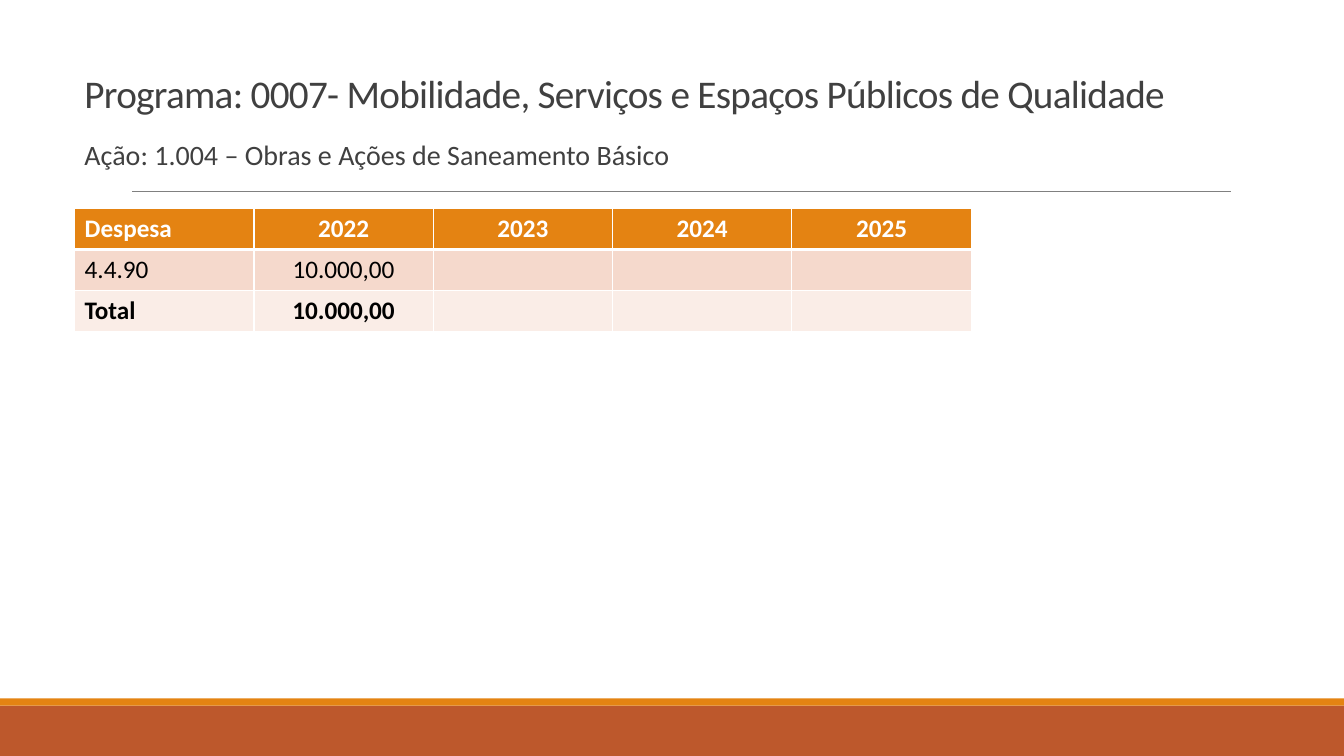
import lxml.etree
import pptx
import pptx.dml.color
import pptx.enum.shapes
import pptx.enum.text
import pptx.oxml.ns
import pptx.util

Cm = pptx.util.Cm
Pt = pptx.util.Pt
ANCHOR = pptx.enum.text.MSO_ANCHOR
ALIGN = pptx.enum.text.PP_ALIGN
qn = pptx.oxml.ns.qn

WIDTH, HEIGHT = 33.87, 19.05
LEFT = 1.88
ORANGE, RUST, GREY, INK = "E48312", "BD582C", "808080", "404040"
WHITE, BLACK = "FFFFFF", "000000"


def color(value):
    return pptx.dml.color.RGBColor.from_string(value)


class Page:
    """Holds the text style and the current slide."""

    font = "Calibri"

    def __init__(self, deck):
        self.slide = deck.slides.add_slide(deck.slide_layouts[6])
        self.shapes = self.slide.shapes

    def span(self, para, text, size, ink, bold=False, spacing=None):
        span = para.add_run()
        span.text = text
        span.font.name = self.font
        span.font.size = Pt(size)
        span.font.bold = bold
        span.font.color.rgb = color(ink)
        if spacing is not None:
            span._r.get_or_add_rPr().set("spc", str(round(spacing * 100)))

    def band(self, top, height, fill):
        band = self.shapes.add_shape(
            pptx.enum.shapes.MSO_SHAPE.RECTANGLE, 0, Cm(top), Cm(WIDTH), Cm(height))
        band.shadow.inherit = False
        band.fill.solid()
        band.fill.fore_color.rgb = color(fill)
        band.line.fill.background()

    def rule(self, left, right, top, ink, weight):
        rule = self.shapes.add_connector(
            pptx.enum.shapes.MSO_CONNECTOR.STRAIGHT, Cm(left), Cm(top), Cm(right), Cm(top))
        rule.line.color.rgb = color(ink)
        rule.line.width = Pt(weight)
        lxml.etree.SubElement(rule._element.spPr, qn("a:effectLst"))

    def text(self, top, width, height, text, size, anchor, line_spacing,
             before=0, after=0, spacing=None):
        box = self.shapes.add_textbox(Cm(LEFT), Cm(top), Cm(width), Cm(height))
        frame = box.text_frame
        frame.word_wrap = True
        frame.vertical_anchor = anchor
        para = frame.paragraphs[0]
        para.line_spacing = line_spacing
        para.space_before = Pt(before)
        para.space_after = Pt(after)
        self.span(para, text, size, INK, spacing=spacing)

    def border(self, cell, side, weight):
        line = lxml.etree.SubElement(
            cell._tc.get_or_add_tcPr(), qn("a:ln" + side), w=str(Pt(weight)))
        fill = lxml.etree.SubElement(line, qn("a:solidFill"))
        lxml.etree.SubElement(fill, qn("a:srgbClr"), val=WHITE)

    def table(self, top, column_width, row_height, rows, styles):
        count = len(rows[0])
        table = self.shapes.add_table(
            len(rows), count, Cm(LEFT), Cm(top),
            Cm(column_width * count), Cm(row_height * len(rows))).table
        for column in table.columns:
            column.width = Cm(column_width)
        for r, (values, (fill, ink, bold)) in enumerate(zip(rows, styles)):
            table.rows[r].height = Cm(row_height)
            for c, value in enumerate(values):
                cell = table.cell(r, c)
                # A thick line parts the header from the body
                for side in "LRTB":
                    thick = (r, side) in ((0, "B"), (1, "T"))
                    self.border(cell, side, 3 if thick else 1)
                cell.fill.solid()
                cell.fill.fore_color.rgb = color(fill)
                para = cell.text_frame.paragraphs[0]
                para.alignment = ALIGN.CENTER if c else ALIGN.LEFT
                if value:
                    self.span(para, value, 18, ink, bold)


def main():
    deck = pptx.Presentation()
    deck.slide_width, deck.slide_height = Cm(WIDTH), Cm(HEIGHT)
    page = Page(deck)

    # Footer bands and heading rule
    page.band(17.78, 1.27, RUST)
    page.band(17.6, 0.18, ORANGE)
    page.rule(3.33, 31.01, 4.83, GREY, 0.5)

    # Programme and action
    page.text(1.17, 29.11, 1.88,
              "Programa: 0007- Mobilidade, Serviços e Espaços Públicos de Qualidade",
              28, ANCHOR.BOTTOM, 0.85, spacing=-0.5)
    page.text(3.43, 27.23, 13.34, "Ação: 1.004 – Obras e Ações de Saneamento Básico",
              20, ANCHOR.TOP, 0.9, before=12, after=2)

    # Expenses by year
    rows = [
        ["Despesa", "2022", "2023", "2024", "2025"],
        ["4.4.90", "10.000,00", "", "", ""],
        ["Total", "10.000,00", "", "", ""],
    ]
    styles = [(ORANGE, WHITE, True), ("F5D9CC", BLACK, False), ("FAEDE7", BLACK, True)]
    page.table(5.26, 4.52, 1.03, rows, styles)

    deck.save("out.pptx")


if __name__ == "__main__":
    main()
